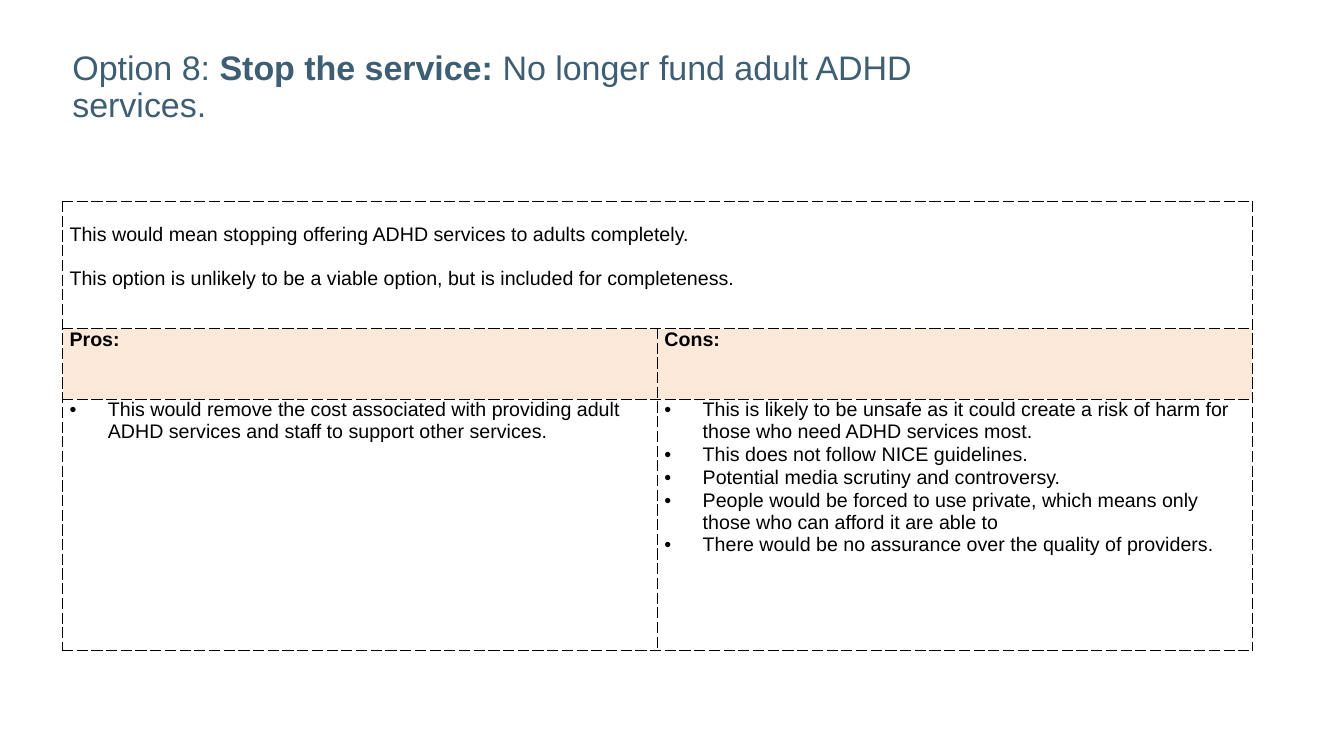
from pptx import Presentation
from pptx.dml.color import RGBColor
from pptx.enum.text import MSO_ANCHOR
from pptx.oxml import parse_xml
from pptx.oxml.ns import nsdecls
from pptx.util import Inches, Pt

# Content
TITLE = [("Option 8: ", False), ("Stop the service: ", True),
         ("No longer fund adult ADHD services.", False)]
SUMMARY = [
    "This would mean stopping offering ADHD services to adults completely.",
    "This option is unlikely to be a viable option, but is included for completeness.",
]
HEADINGS = ["Pros:", "Cons:"]
PROS = ["This would remove the cost associated with providing adult ADHD services "
        "and staff to support other services."]
CONS = [
    "This is likely to be unsafe as it could create a risk of harm for those "
    "who need ADHD services most.",
    "This does not follow NICE guidelines.",
    "Potential media scrutiny and controversy.",
    "People would be forced to use private, which means only those who can "
    "afford it are able to",
    "There would be no assurance over the quality of providers.",
]

# Layout and colours
LEFT, TABLE_TOP = 0.62, 2
COL_WIDTH = 5.9
ROW_HEIGHTS = [1.26, 0.7, 2.49]
INDENT = Inches(0.38)
BLACK, WHITE, SLATE, PEACH = "000000", "FFFFFF", "3E5F73", "FDE9D9"


def rgb(color):
    return RGBColor.from_string(color)


def add_run(p, text, size, color, bold=False):
    r = p.add_run()
    r.text = text
    r.font.name = "Arial"
    r.font.size = Pt(size)
    r.font.bold = bold
    r.font.color.rgb = rgb(color)


def add_bullet(p):
    pPr = p._p.get_or_add_pPr()
    pPr.set("marL", str(INDENT))
    pPr.set("indent", str(-INDENT))
    pPr.append(parse_xml(f'<a:buFont {nsdecls("a")} typeface="Arial"/>'))
    pPr.append(parse_xml(f'<a:buChar {nsdecls("a")} char="•"/>'))


def add_borders(cell):
    tcPr = cell._tc.get_or_add_tcPr()
    for i, side in enumerate("LRTB"):
        tcPr.insert(i, parse_xml(
            f'<a:ln{side} {nsdecls("a")} w="{Pt(1)}"><a:solidFill>'
            f'<a:srgbClr val="{BLACK}"/></a:solidFill>'
            f'<a:prstDash val="dash"/></a:ln{side}>'))


def fill_cell(cell, lines, fill=WHITE, bold=False, bullets=False):
    cell.fill.solid()
    cell.fill.fore_color.rgb = rgb(fill)
    cell.margin_left = cell.margin_right = Inches(0.07)
    cell.margin_top = cell.margin_bottom = 0
    tf = cell.text_frame
    for i, line in enumerate(lines):
        p = tf.add_paragraph() if i else tf.paragraphs[0]
        if bullets:
            add_bullet(p)
        add_run(p, line, 14, BLACK, bold)


prs = Presentation()
prs.slide_width, prs.slide_height = Inches(13.33), Inches(7.5)
s = prs.slides.add_slide(prs.slide_layouts[6])

# Table
table = s.shapes.add_table(3, 2, Inches(LEFT), Inches(TABLE_TOP),
                           Inches(2 * COL_WIDTH), Inches(sum(ROW_HEIGHTS))).table
table.first_row = table.horz_banding = False
for col in table.columns:
    col.width = Inches(COL_WIDTH)
for row, height in zip(table.rows, ROW_HEIGHTS):
    row.height = Inches(height)

summary = table.cell(0, 0)
summary.merge(table.cell(0, 1))
fill_cell(summary, SUMMARY)
summary.margin_top = Inches(0.22)
summary.text_frame.paragraphs[1].space_before = Pt(15.5)

for c, (heading, points) in enumerate(zip(HEADINGS, [PROS, CONS])):
    fill_cell(table.cell(1, c), [heading], PEACH, bold=True)
    fill_cell(table.cell(2, c), points, bullets=True)
table.cell(2, 1).text_frame.paragraphs[1].space_after = Pt(1.4)
for cell in table.iter_cells():
    add_borders(cell)

# Title
tf = s.shapes.add_textbox(Inches(LEFT), Inches(0.46),
                          Inches(9.44), Inches(0.8)).text_frame
tf.word_wrap = True
tf.vertical_anchor = MSO_ANCHOR.TOP
p = tf.paragraphs[0]
p.line_spacing = 0.9
for text, bold in TITLE:
    add_run(p, text, 24.3, SLATE, bold)

prs.save("out.pptx")
